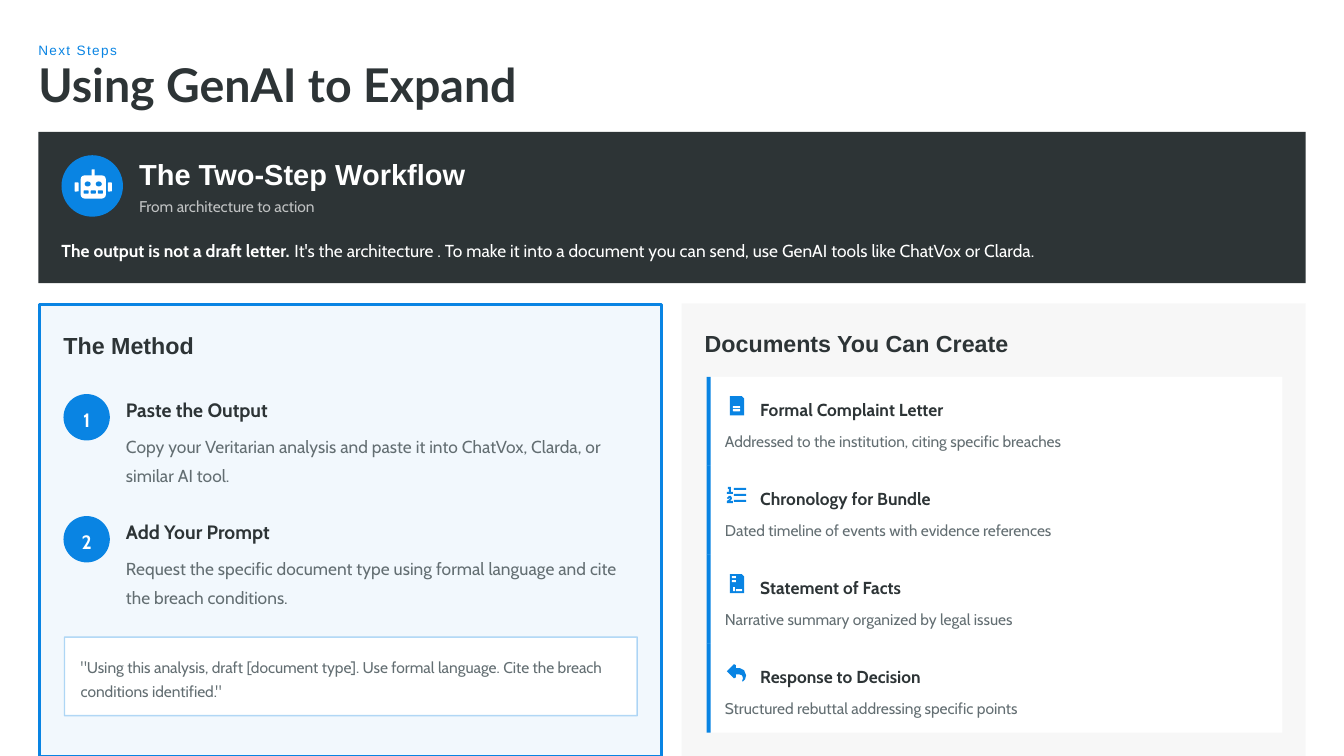
"""Build the slide on using GenAI to expand an analysis into documents."""
from lxml import etree
from pptx import Presentation
from pptx.dml.color import RGBColor
from pptx.enum.shapes import MSO_SHAPE
from pptx.enum.text import MSO_ANCHOR, MSO_AUTO_SIZE, PP_ALIGN
from pptx.oxml.ns import qn
from pptx.util import Inches, Pt

BLUE = RGBColor(0x09, 0x84, 0xE3)
DARK = RGBColor(0x2D, 0x34, 0x36)
GREY = RGBColor(0x63, 0x6E, 0x72)
WHITE = RGBColor(0xFF, 0xFF, 0xFF)
RECT = MSO_SHAPE.RECTANGLE
OVAL = MSO_SHAPE.OVAL
ROUND = MSO_SHAPE.ROUNDED_RECTANGLE
SNIP = MSO_SHAPE.SNIP_1_RECTANGLE
MIDDLE = MSO_ANCHOR.MIDDLE
FIXED = MSO_AUTO_SIZE.NONE
LEFT = PP_ALIGN.LEFT
CENTER = PP_ALIGN.CENTER

deck = Presentation()
deck.slide_width = Inches(13.33)
deck.slide_height = Inches(7.5)
slide = deck.slides.add_slide(deck.slide_layouts[5])


def block(kind, x, y, w, h, fill):
    shape = slide.shapes.add_shape(kind, Inches(x), Inches(y), Inches(w), Inches(h))
    shape.shadow.inherit = False
    shape.fill.solid()
    shape.fill.fore_color.rgb = fill
    shape.line.fill.background()
    return shape


def write(x, y, w, h, words, size, color, font="Cabin", bold=False, space=1.3,
          align=LEFT, shape=None):
    spot = Inches(x), Inches(y), Inches(w), Inches(h)
    shape = shape or slide.shapes.add_textbox(*spot)
    shape.left, shape.top, shape.width, shape.height = spot
    frame = shape.text_frame
    frame.margin_left = frame.margin_right = frame.margin_top = frame.margin_bottom = 0
    frame.word_wrap = True
    frame.auto_size = FIXED
    frame.vertical_anchor = MIDDLE
    para = frame.paragraphs[0]
    para.text = words
    para.alignment = align
    para.line_spacing = space
    para.font.size = Pt(size)
    para.font.name = font
    para.font.bold = bold
    para.font.color.rgb = color
    return para


topic = write(0.38, 0.39, 12.63, 0.19, "Next Steps", 9.68, BLUE, "Arial", space=1.2)
topic.runs[0]._r.get_or_add_rPr().set("spc", "97")
write(0.38, 0.65, 12.8, 0.46, "Using GenAI to Expand", 33.18, DARK, "Lato", True, 0.8,
      shape=slide.shapes.title)

block(RECT, 0.38, 1.31, 12.57, 1.5, DARK)
block(OVAL, 0.61, 1.54, 0.61, 0.61, BLUE)
robot = [
    (ROUND, 0.74, 1.81, 0.04, 0.09, WHITE),
    (ROUND, 1.07, 1.81, 0.04, 0.09, WHITE),
    (ROUND, 0.91, 1.68, 0.03, 0.1, WHITE),
    (ROUND, 0.8, 1.74, 0.25, 0.23, WHITE),
    (OVAL, 0.84, 1.8, 0.06, 0.05, BLUE),
    (OVAL, 0.95, 1.8, 0.06, 0.05, BLUE),
    (ROUND, 0.83, 1.89, 0.05, 0.03, BLUE),
    (ROUND, 0.9, 1.89, 0.05, 0.03, BLUE),
    (ROUND, 0.97, 1.89, 0.05, 0.03, BLUE),
]
for part in robot:
    block(*part)
write(1.38, 1.55, 4, 0.35, "The Two-Step Workflow", 20.74, WHITE, "Arial", True, 1)
motto = write(1.38, 1.9, 4, 0.23, "From architecture to action", 11.06, WHITE)
claim = write(0.61, 2.3, 12.19, 0.28, "The output is not a draft letter.", 12.44, WHITE,
              bold=True, space=1.4)
rest = claim.add_run()
rest.text = (" It's the architecture . To make it into a document you can send, "
             "use GenAI tools like ChatVox or Clarda.")
rest.font.bold = False

method = block(RECT, 0.39, 3.02, 6.17, 4.48, BLUE)
method.line.color.rgb = BLUE
method.line.width = Pt(2)
write(0.63, 3.26, 5.8, 0.31, "The Method", 16.59, DARK, "Arial", True, 1.1)
steps = [
    ("Paste the Output", "Copy your Veritarian analysis and paste it into ChatVox, "
     "Clarda, or similar AI tool."),
    ("Add Your Prompt", "Request the specific document type using formal language "
     "and cite the breach conditions."),
]
for i, (head, body) in enumerate(steps):
    y = 3.91 + 1.21 * i
    disc = block(OVAL, 0.63, y, 0.46, 0.46, BLUE)
    write(0.63, y, 0.46, 0.46, str(i + 1), 13.82, WHITE, bold=True, space=1.2,
          align=CENTER, shape=disc)
    write(1.25, y, 5.17, 0.27, head, 13.82, DARK, bold=True, space=1.2)
    write(1.25, y + 0.34, 5, 0.57, body, 12.44, GREY, space=1.4)

prompt = block(RECT, 0.64, 6.32, 5.68, 0.78, WHITE)
prompt.line.color.rgb = BLUE
prompt.line.width = Pt(1)
write(0.8, 6.48, 5.44, 0.46, '"Using this analysis, draft [document type]. Use formal '
      'language. Cite the breach conditions identified."', 11.06, GREY)

panel = block(RECT, 6.76, 3.01, 6.19, 4.49, GREY)
write(6.99, 3.24, 5.84, 0.31, "Documents You Can Create", 16.59, DARK, "Arial", True, 1.1)

sheet = (SNIP, 0.03, 0, 0.14, 0.19, BLUE)
letter = [sheet] + [(ROUND, 0.06, y, 0.07, 0.02, WHITE) for y in (0.1, 0.13)]
facts = [sheet] + [(ROUND, 0.05, y, 0.04, 0.02, WHITE) for y in (0.02, 0.06)]
facts += [
    (RECT, 0.06, 0.13, 0.02, 0.04, WHITE),
    (ROUND, 0.09, 0.15, 0.06, 0.02, WHITE),
]
rows = [
    ("Formal Complaint Letter", "Addressed to the institution, citing specific breaches",
     letter),
    ("Chronology for Bundle", "Dated timeline of events with evidence references", []),
    ("Statement of Facts", "Narrative summary organized by legal issues", facts),
    ("Response to Decision", "Structured rebuttal addressing specific points", []),
]
pitch = 3.53 / len(rows)
for i, (head, body, icon) in enumerate(rows):
    y = 3.74 + pitch * i
    block(RECT, 7.01, y, 5.71, pitch, WHITE)
    block(RECT, 7.01, y, 0.04, pitch, BLUE)
    for kind, dx, dy, w, h, fill in icon:
        block(kind, 7.21 + dx, y + 0.19 + dy, w, h, fill)
    write(7.54, y + 0.16, 4, 0.27, head, 12.44, DARK, bold=True)
    write(7.19, y + 0.5, 5.46, 0.23, body, 11.06, GREY)

one = [(7.22, 4.83), (7.25, 4.83), (7.25, 4.88), (7.27, 4.88), (7.27, 4.9), (7.21, 4.9),
       (7.21, 4.88), (7.23, 4.88), (7.23, 4.85), (7.22, 4.85)]
two = [(7.21, 4.94), (7.23, 4.92), (7.25, 4.92), (7.26, 4.94), (7.26, 4.95), (7.24, 4.97),
       (7.27, 4.97), (7.27, 4.99), (7.21, 4.99), (7.21, 4.97), (7.24, 4.95), (7.24, 4.94),
       (7.22, 4.95)]
bars = [[(7.28, y), (7.4, y), (7.4, y + 0.02), (7.28, y + 0.02)]
        for y in (4.84, 4.9, 4.96)]
curve = [(7.21, 6.66), (7.28, 6.59), (7.3, 6.6), (7.3, 6.63), (7.34, 6.63), (7.38, 6.65),
         (7.4, 6.7), (7.39, 6.74), (7.37, 6.76), (7.36, 6.76), (7.37, 6.73),
         (7.36, 6.7), (7.33, 6.69), (7.3, 6.69), (7.3, 6.72), (7.28, 6.73)]
for loops in ([one, two] + bars, [curve]):
    pen = slide.shapes.build_freeform()
    for loop in loops:
        spots = [(Inches(x), Inches(y)) for x, y in loop]
        pen.move_to(*spots[0])
        pen.add_line_segments(spots[1:])
    mark = pen.convert_to_shape()
    mark.shadow.inherit = False
    mark.fill.solid()
    mark.fill.fore_color.rgb = BLUE
    mark.line.fill.background()

veils = [
    (method._element.spPr, "a:solidFill/a:srgbClr", 5),
    (panel._element.spPr, "a:solidFill/a:srgbClr", 5),
    (prompt._element.spPr, "a:ln/a:solidFill/a:srgbClr", 30),
    (motto._p, ".//a:solidFill/a:srgbClr", 70),
]
for node, route, share in veils:
    tint = node.xpath(route)[0]
    etree.SubElement(tint, qn("a:alpha")).set("val", str(share * 1000))

deck.save("out.pptx")
